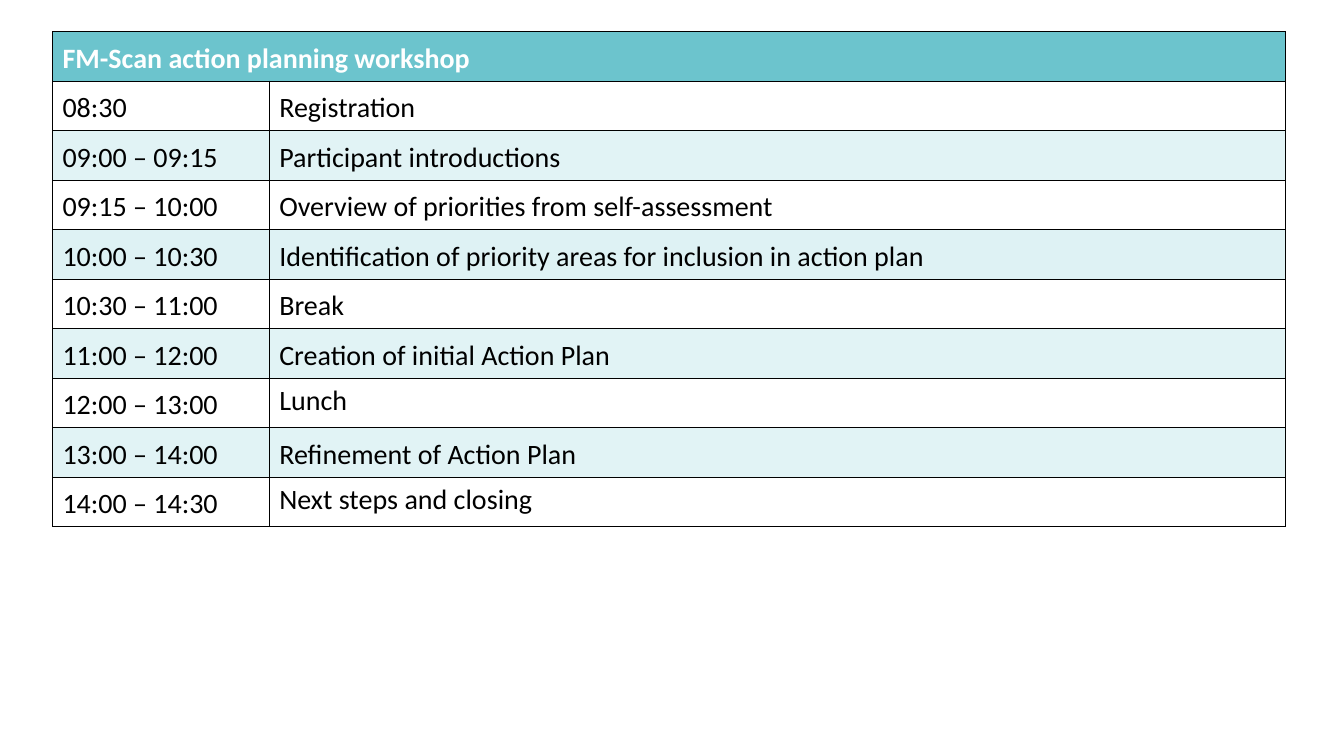
from lxml import etree
from pptx import Presentation
from pptx.dml.color import RGBColor
from pptx.oxml import ns
from pptx.util import Inches, Pt

TEAL, WHITE, BLACK = "6CC4CD", "FFFFFF", "000000"
SESSIONS = [
    ("08:30", "Registration"),
    ("09:00 – 09:15", "Participant introductions"),
    ("09:15 – 10:00", "Overview of priorities from self-assessment"),
    ("10:00 – 10:30", "Identification of priority areas for inclusion in action plan"),
    ("10:30 – 11:00", "Break"),
    ("11:00 – 12:00", "Creation of initial Action Plan"),
    ("12:00 – 13:00", "Lunch"),
    ("13:00 – 14:00", "Refinement of Action Plan"),
    ("14:00 – 14:30", "Next steps and closing"),
]
TIGHT_SESSIONS = ("Lunch", "Next steps and closing")


def color(hex_code):
    return RGBColor.from_string(hex_code)


def style_cell(cell, fill, opacity=100, font_color=BLACK, bold=False):
    """Format the text, then add the borders ahead of the fill."""
    paragraph = cell.text_frame.paragraphs[0]
    tight = cell.text in TIGHT_SESSIONS
    paragraph.line_spacing = 1.02 if tight else 1.15
    paragraph.space_after = Pt(0.6 if tight else 0)
    for run in paragraph.runs:
        run.font.name = "Calibri"
        run.font.size = Pt(20)
        run.font.bold = bold
        run.font.color.rgb = color(font_color)

    properties = cell._tc.get_or_add_tcPr()
    for side in ("lnL", "lnR", "lnT", "lnB"):
        border = etree.SubElement(properties, ns.qn(f"a:{side}"), w=str(Pt(0.25)))
        solid = etree.SubElement(border, ns.qn("a:solidFill"))
        etree.SubElement(solid, ns.qn("a:srgbClr"), val=BLACK)
    cell.fill.solid()
    cell.fill.fore_color.rgb = color(fill)
    if opacity < 100:
        tint = properties.find(ns.qn("a:solidFill")).find(ns.qn("a:srgbClr"))
        etree.SubElement(tint, ns.qn("a:alpha"), val=str(opacity * 1000))


# Slide
prs = Presentation()
prs.slide_width, prs.slide_height = Inches(13.33), Inches(7.5)
slide = prs.slides.add_slide(prs.slide_layouts[6])

# Agenda grid
row_count = len(SESSIONS) + 1
agenda = slide.shapes.add_table(
    row_count, 2, Inches(0.52), Inches(0.31), Inches(12.23), Inches(0.46 * row_count)
).table
agenda.columns[0].width = Inches(2.15)
agenda.columns[1].width = Inches(10.08)

# Heading across both columns
heading = agenda.cell(0, 0)
heading.merge(agenda.cell(0, 1))
heading.text = "FM-Scan action planning workshop"
for cell in agenda.rows[0].cells:
    style_cell(cell, TEAL, font_color=WHITE, bold=True)

# Sessions, with every second row tinted
for row, session in enumerate(SESSIONS, start=1):
    for column, wording in enumerate(session):
        cell = agenda.cell(row, column)
        cell.text = wording
        if row % 2:
            style_cell(cell, WHITE)
        else:
            style_cell(cell, TEAL, opacity=22 if row == 4 else 20)

prs.save("out.pptx")
